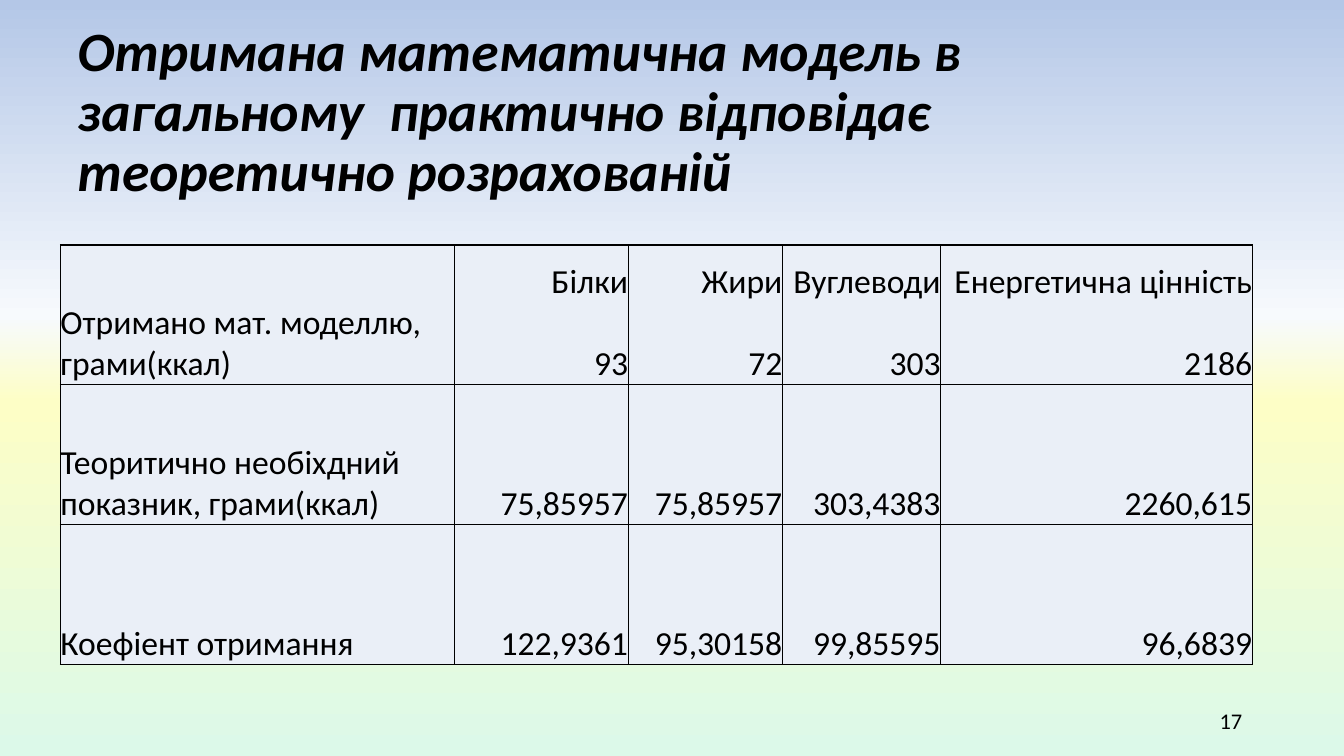
from copy import deepcopy

from lxml.etree import SubElement
from pptx import Presentation
from pptx.dml.color import RGBColor
from pptx.enum.text import MSO_ANCHOR, MSO_AUTO_SIZE, PP_ALIGN
from pptx.oxml.ns import qn
from pptx.util import Inches, Pt

INK = "000000"
CELL_FILL = "EAEFF7"
SKY_STOPS = [(0, "B4C7E7"), (0.42, "F7FAFD"), (0.53, "FDFEC6"), (1, "DCF9E9")]
TITLE = "Отримана математична модель в загальному  практично відповідає теоретично розрахованій"
COLUMN_WIDTHS = [3.91, 1.72, 1.53, 1.57, 3.09]
NUTRIENTS = ["Білки", "Жири", "Вуглеводи", "Енергетична цінність"]
RESULTS = [
    ["Отримано мат. моделлю, грами(ккал)", "93", "72", "303", "2186"],
    ["Теоритично необіхдний показник, грами(ккал)",
     "75,85957", "75,85957", "303,4383", "2260,615"],
    ["Коефіент отримання", "122,9361", "95,30158", "99,85595", "96,6839"],
]


def colour(hex_code):
    return RGBColor.from_string(hex_code)


def write(frame, *lines, size=24, bold=False, italic=False, align=PP_ALIGN.LEFT,
          anchor=MSO_ANCHOR.MIDDLE, spacing=None, gap=0):
    """Put each line in its own paragraph, with gap points between them."""
    frame.word_wrap = True
    frame.vertical_anchor = anchor
    for index, line in enumerate(lines):
        paragraph = frame.add_paragraph() if index else frame.paragraphs[0]
        paragraph.alignment = align
        paragraph.line_spacing = spacing
        paragraph.space_before = Pt(gap if index else 0)
        run = paragraph.add_run()
        run.text = line
        font = run.font
        font.name, font.size, font.bold, font.italic = "Calibri", Pt(size), bold, italic
        font.color.rgb = colour(INK)


def paint_sky(slide):
    sky = slide.background.fill
    sky.gradient()
    sky.gradient_angle = 270
    stop_list = next(slide.element.iter(qn("a:gsLst")))
    for _ in range(len(SKY_STOPS) - len(stop_list)):
        stop_list.append(deepcopy(stop_list[0]))
    for stop, (position, hex_code) in zip(sky.gradient_stops, SKY_STOPS):
        stop.position = position
        stop.color.rgb = colour(hex_code)


def add_title(slide, left, top, width, height):
    title = slide.shapes.title
    title.left, title.top = Inches(left), Inches(top)
    title.width, title.height = Inches(width), Inches(height)
    title.text_frame.auto_size = MSO_AUTO_SIZE.NONE
    write(title.text_frame, TITLE, size=39.6, bold=True, italic=True, spacing=0.9)


def outline(cell):
    properties = cell._tc.get_or_add_tcPr()
    for index, side in enumerate(("lnL", "lnR", "lnT", "lnB")):
        border = SubElement(properties, qn(f"a:{side}"), w=str(Pt(1)))
        SubElement(SubElement(border, qn("a:solidFill")), qn("a:srgbClr"), val=INK)
        properties.insert(index, border)


def add_results(slide, left, top, width, height):
    results = slide.shapes.add_table(
        len(RESULTS), len(COLUMN_WIDTHS),
        Inches(left), Inches(top), Inches(width), Inches(height)).table
    results.first_row = results.horz_banding = False
    for column, share in zip(results.columns, COLUMN_WIDTHS):
        column.width = Inches(width * share / sum(COLUMN_WIDTHS))
    for r, values in enumerate(RESULTS):
        for c, value in enumerate(values):
            cell = results.cell(r, c)
            cell.margin_left = cell.margin_right = cell.margin_top = cell.margin_bottom = 0
            cell.vertical_anchor = MSO_ANCHOR.BOTTOM
            cell.fill.solid()
            cell.fill.fore_color.rgb = colour(CELL_FILL)
            outline(cell)
            lines = [NUTRIENTS[c - 1], value] if r == 0 and c else [value]
            write(cell.text_frame, *lines, anchor=None, gap=29.3,
                  align=PP_ALIGN.RIGHT if c else PP_ALIGN.LEFT)


def add_page_number(slide, left, top, width, height):
    box = slide.shapes.add_textbox(Inches(left), Inches(top), Inches(width), Inches(height))
    write(box.text_frame, "17", size=16, align=PP_ALIGN.RIGHT)


def main():
    deck = Presentation()
    deck.slide_width, deck.slide_height = Inches(13.33), Inches(7.5)
    slide = deck.slides.add_slide(deck.slide_layouts[5])
    paint_sky(slide)
    add_title(slide, 0.67, 0.4, 11.75, 1.45)
    add_results(slide, 0.6, 2.43, sum(COLUMN_WIDTHS), 4.16)
    add_page_number(slide, 9.42, 6.95, 3, 0.4)
    deck.save("out.pptx")


if __name__ == "__main__":
    main()
